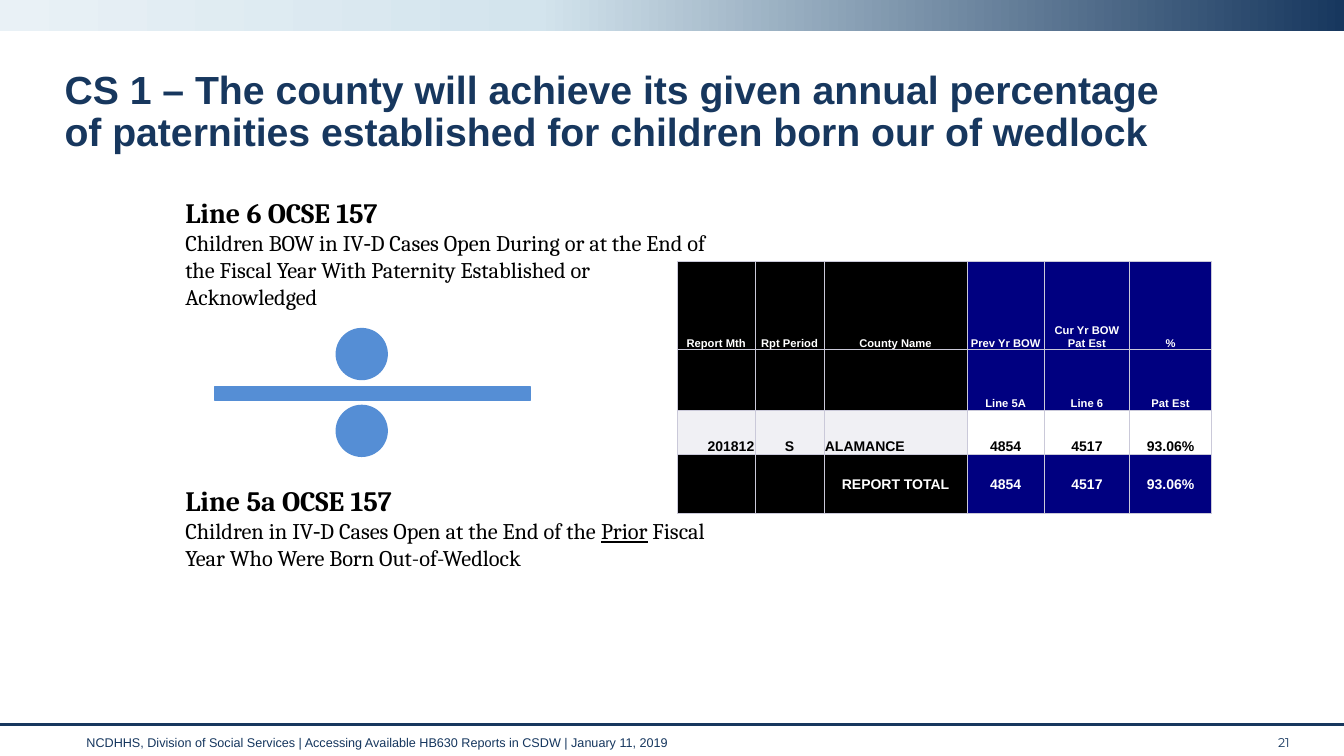
import copy
import pptx
import pptx.util
import pptx.oxml
import pptx.dml.color
import pptx.enum.shapes
import pptx.enum.text
from dataclasses import dataclass

Pt = pptx.util.Pt
Align = pptx.enum.text.PP_ALIGN
Anchor = pptx.enum.text.MSO_ANCHOR
Fit = pptx.enum.text.MSO_AUTO_SIZE
Shape = pptx.enum.shapes.MSO_SHAPE

TITLE = ("CS 1 – The county will achieve its given annual percentage "
         "of paternities established for children born our of wedlock")
FOOTER = ("NCDHHS, Division of Social Services | Accessing Available HB630 "
          "Reports in CSDW | January 11, 2019")
PAGE = "21"
LINES = [
    (136.1, 111.6, "Line 6 OCSE 157",
     [("Children BOW in IV‑D Cases Open During or at the End of the Fiscal Year "
       "With Paternity Established or Acknowledged", {})]),
    (342, 92.2, "Line 5a OCSE 157",
     [("Children in IV‑D Cases Open at the End of the ", {}),
      ("Prior", {"line": True}),
      (" Fiscal Year Who Were Born Out-of-Wedlock", {})]),
]
ROWS = [
    ["Report Mth", "Rpt Period", "County Name", "Prev Yr BOW", "Cur Yr BOW Pat Est", "%"],
    ["", "", "", "Line 5A", "Line 6", "Pat Est"],
    ["201812", "S", "ALAMANCE", "4854", "4517", "93.06%"],
    ["", "", "REPORT TOTAL", "4854", "4517", "93.06%"],
]
WIDTHS = [55.6, 49.2, 102.2, 55.2, 61, 58.4]
HEIGHTS = [63, 43.4, 31.6, 42.2]
KEYS = 3
DATA = 2
TOTAL = 3


@dataclass(frozen=True)
class Theme:
    navy: str = "17375E"
    foot: str = "15365E"
    blue: str = "558ED5"
    black: str = "000000"
    white: str = "FFFFFF"
    deep: str = "000080"
    pale: str = "F0F0F4"
    rule: str = "CAC9D9"
    fade: tuple = ((0, "17375E"), (0.6, "D3E4ED"), (1, "E9F1F6"))
    sans: str = "Arial"
    serif: str = "Cambria"
    page: str = "Montserrat"
    title: int = 28
    head: int = 20
    body: int = 16
    cell: int = 10
    label: int = 8
    small: int = 9


T = Theme()


def rgb(code):
    return pptx.dml.color.RGBColor.from_string(code)


def write(para, text, *, size, font=T.sans, color=T.black, bold=False,
          line=False, align=None):
    run = para.add_run()
    run.text = text
    face = run.font
    face.size, face.name, face.bold = Pt(size), font, bold
    face.color.rgb = rgb(color)
    if line:
        face.underline = True
    if align is not None:
        para.alignment = align


def place(shape, x, y, w, h):
    shape.left, shape.top, shape.width, shape.height = map(Pt, (x, y, w, h))


def add_box(slide, x, y, w, h, anchor=Anchor.TOP, fit=Fit.NONE):
    frame = slide.shapes.add_textbox(Pt(x), Pt(y), Pt(w), Pt(h)).text_frame
    frame.word_wrap = True
    frame.vertical_anchor = anchor
    frame.auto_size = fit
    return frame.paragraphs[0]


def add_frame(slide):
    band = slide.shapes.add_shape(Shape.RECTANGLE, 0, 0, Pt(960), Pt(22.3))
    band.shadow.inherit = False
    band.line.fill.background()
    band.fill.gradient()
    band.fill.gradient_angle = 180
    stops = band._element.spPr.find(".//" + pptx.oxml.ns.qn("a:gsLst"))
    stops.append(copy.deepcopy(stops[-1]))
    for stop, (spot, code) in zip(band.fill.gradient_stops, T.fade):
        stop.position = spot
        stop.color.rgb = rgb(code)

    rule = slide.shapes.add_connector(
        pptx.enum.shapes.MSO_CONNECTOR.STRAIGHT, 0, Pt(517.6), Pt(960), Pt(517.6))
    rule.line.color.rgb = rgb(T.navy)
    rule.line.width = Pt(1.75)
    rule._element.spPr.append(pptx.oxml.parse_xml(
        f"<a:effectLst {pptx.oxml.ns.nsdecls('a')}/>"))

    write(add_box(slide, 54.7, 519.8, 839.5, 20.9, Anchor.MIDDLE), FOOTER,
          size=T.small, color=T.foot)
    write(add_box(slide, 905.8, 519.8, 42.5, 21.6, Anchor.MIDDLE), PAGE,
          size=T.small, font=T.page, color=T.foot)


def add_title(slide):
    title = slide.shapes.title
    place(title, 38.9, 46.8, 826.6, 49.7)
    frame = title.text_frame
    frame.word_wrap = True
    frame.auto_size = Fit.NONE
    frame.vertical_anchor = Anchor.TOP
    para = frame.paragraphs[0]
    para.line_spacing = 0.9
    write(para, TITLE, size=T.title, color=T.navy, bold=True, align=Align.LEFT)


def add_lines(slide):
    for y, h, head, parts in LINES:
        para = add_box(slide, 125.3, y, 391, h, fit=Fit.SHAPE_TO_FIT_TEXT)
        write(para, head, size=T.head, font=T.serif, bold=True)
        para.add_line_break()
        for text, form in parts:
            write(para, text, size=T.body, font=T.serif, **form)


def add_sign(slide):
    group = slide.shapes.add_group_shape()
    mid, dot = 258.4, 36.4
    parts = [(Shape.RECTANGLE, 153.4, 276.5, 225.4, 9.4)]
    parts += [(Shape.OVAL, mid - dot / 2, y, dot, dot) for y in (234.7, 289.6)]
    for kind, *spot in parts:
        shape = group.shapes.add_shape(kind, *map(Pt, spot))
        shape.shadow.inherit = False
        shape.fill.solid()
        shape.fill.fore_color.rgb = rgb(T.blue)
        shape.line.color.rgb = rgb(T.blue)
        shape.line.width = Pt(1)


def add_edges(cell):
    props = cell._tc.get_or_add_tcPr()
    for slot, side in enumerate("LRTB"):
        props.insert(slot, pptx.oxml.parse_xml(
            f'<a:ln{side} {pptx.oxml.ns.nsdecls("a")} w="{Pt(0.5)}"><a:solidFill>'
            f'<a:srgbClr val="{T.rule}"/></a:solidFill></a:ln{side}>'))


def add_grid(slide):
    table = slide.shapes.add_table(
        len(ROWS), len(WIDTHS), Pt(483.8), Pt(186.7),
        Pt(sum(WIDTHS)), Pt(sum(HEIGHTS))).table
    table.first_row = table.horz_banding = False
    for col, width in zip(table.columns, WIDTHS):
        col.width = Pt(width)
    for row, height in zip(table.rows, HEIGHTS):
        row.height = Pt(height)
    for r, texts in enumerate(ROWS):
        shades = (T.pale, T.white) if r == DATA else (T.black, T.deep)
        for c, text in enumerate(texts):
            cell = table.cell(r, c)
            cell.fill.solid()
            cell.fill.fore_color.rgb = rgb(shades[c >= KEYS])
            cell.margin_left = cell.margin_right = cell.margin_top = Pt(0.7)
            cell.margin_bottom = 0
            cell.vertical_anchor = Anchor.MIDDLE if r == TOTAL else Anchor.BOTTOM
            add_edges(cell)
            if text:
                sides = {(DATA, 0): Align.RIGHT, (DATA, 2): Align.LEFT}
                write(cell.text_frame.paragraphs[0], text, bold=True,
                      size=T.label if r < DATA else T.cell,
                      color=T.black if r == DATA else T.white,
                      align=sides.get((r, c), Align.CENTER))


def main():
    deck = pptx.Presentation()
    deck.slide_width, deck.slide_height = Pt(960), Pt(540)
    slide = deck.slides.add_slide(deck.slide_layouts[5])
    add_frame(slide)
    add_lines(slide)
    add_sign(slide)
    add_title(slide)
    add_grid(slide)
    deck.save("out.pptx")


if __name__ == "__main__":
    main()
